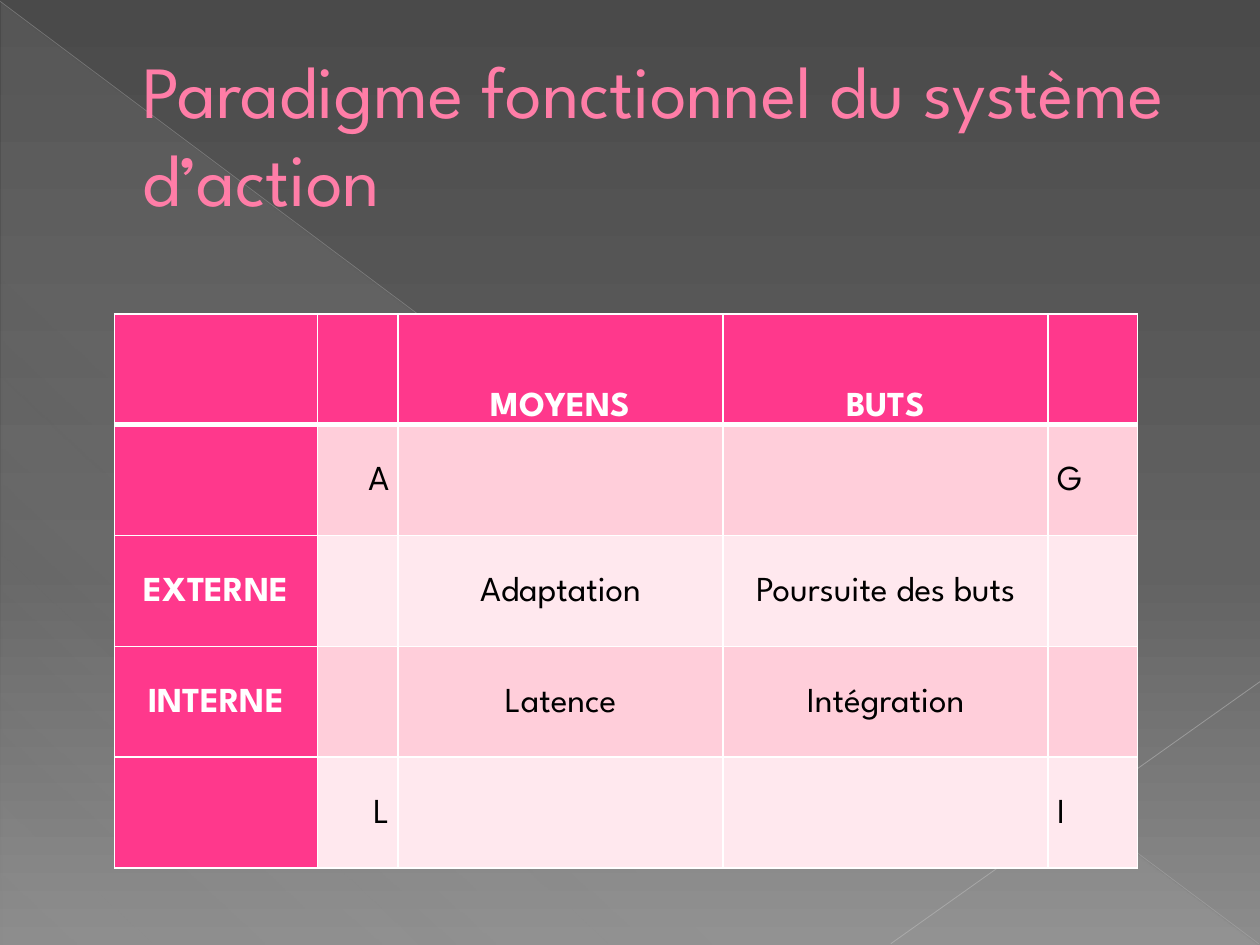
from lxml import etree
from pptx import Presentation
from pptx.dml.color import RGBColor
from pptx.enum.shapes import MSO_CONNECTOR, MSO_SHAPE
from pptx.enum.text import MSO_ANCHOR, PP_ALIGN
from pptx.oxml.ns import qn
from pptx.util import Inches, Pt

LEFT, CENTER, RIGHT = PP_ALIGN.LEFT, PP_ALIGN.CENTER, PP_ALIGN.RIGHT
MIDDLE, BOTTOM = MSO_ANCHOR.MIDDLE, MSO_ANCHOR.BOTTOM
STRAIGHT = MSO_CONNECTOR.STRAIGHT
RIGHT_TRIANGLE = MSO_SHAPE.RIGHT_TRIANGLE

ROWS = [
    ["", "", "MOYENS", "BUTS", ""],
    ["", "A", "", "", "G"],
    ["EXTERNE", "", "Adaptation", "Poursuite des buts", ""],
    ["INTERNE", "", "Latence", "Intégration", ""],
    ["", "L", "", "", "I"],
]
COLUMN_WIDTHS = [1.61, 0.64, 2.58, 2.58, 0.71]
COLUMN_ALIGNMENTS = [CENTER, RIGHT, CENTER, CENTER, LEFT]
ROW_HEIGHT = 0.88


def color(hex_string):
    return RGBColor.from_string(hex_string)


def add_color(parent, hex_string, opacity=100):
    """Append a solid colour with its opacity in percent to an XML element."""
    element = etree.SubElement(parent, qn("a:srgbClr"), val=hex_string)
    if opacity < 100:
        etree.SubElement(element, qn("a:alpha"), val=str(opacity * 1000))


def replace_with_gradient(solid_fill, stops, angle):
    """Swap a solid fill for stops of (position, colour, opacity)."""
    gradient = etree.Element(qn("a:gradFill"), rotWithShape="1")
    stop_list = etree.SubElement(gradient, qn("a:gsLst"))
    for position, hex_string, opacity in stops:
        stop = etree.SubElement(stop_list, qn("a:gs"), pos=str(position * 1000))
        add_color(stop, hex_string, opacity)
    etree.SubElement(gradient, qn("a:lin"), ang=str(angle * 60000), scaled="0")
    solid_fill.getparent().replace(solid_fill, gradient)


def write(text_frame, text, size=20, hex_string="000000", bold=False,
          align=LEFT, line_spacing=None, indent=0):
    paragraph = text_frame.paragraphs[0]
    paragraph.alignment = align
    if line_spacing:
        paragraph.line_spacing = line_spacing
    if indent:
        properties = paragraph._p.get_or_add_pPr()
        properties.set("marL", str(Inches(indent)))
        properties.set("indent", "0")
    run = paragraph.add_run()
    run.text = text
    run.font.name = SlideBuilder.FONT
    run.font.size = Pt(size)
    run.font.bold = bold
    run.font.color.rgb = color(hex_string)


class SlideBuilder:
    FONT = "League Spartan"
    TITLE = "FF7DA7"
    ACCENT = "FF388C"
    BANDS = ["FFE8EE", "FFCEDA"]
    WHITE = "FFFFFF"

    def __init__(self, presentation):
        self.slide = presentation.slides.add_slide(presentation.slide_layouts[6])

    def background(self, stops, angle):
        self.slide.background.fill.solid()
        solid_fill = self.slide._element.find(".//" + qn("a:solidFill"))
        replace_with_gradient(solid_fill, stops, angle)

    def triangle(self, left, top, width, height, stops, angle):
        shape = self.slide.shapes.add_shape(
            RIGHT_TRIANGLE, Inches(left), Inches(top), Inches(width), Inches(height))
        shape.shadow.inherit = False
        shape.line.fill.background()
        shape.fill.solid()
        solid_fill = shape._element.spPr.find(qn("a:solidFill"))
        replace_with_gradient(solid_fill, stops, angle)

    def line(self, start, end, hex_string, width, opacity):
        connector = self.slide.shapes.add_connector(
            STRAIGHT, *(Inches(value) for value in start + end))
        connector.line.width = Pt(width)
        connector.line.color.rgb = color(hex_string)
        properties = connector._element.spPr
        line_color = properties.find(".//" + qn("a:srgbClr"))
        etree.SubElement(line_color, qn("a:alpha"), val=str(opacity * 1000))
        etree.SubElement(properties, qn("a:effectLst"))

    def title(self, text, left, top, width, height):
        box = self.slide.shapes.add_textbox(
            Inches(left), Inches(top), Inches(width), Inches(height))
        box.text_frame.word_wrap = True
        box.text_frame.vertical_anchor = MIDDLE
        write(box.text_frame, text, size=42, hex_string=self.TITLE, indent=0.53)

    def table(self, rows, left, top):
        table = self.slide.shapes.add_table(
            len(rows), len(COLUMN_WIDTHS), Inches(left), Inches(top),
            Inches(sum(COLUMN_WIDTHS)), Inches(ROW_HEIGHT * len(rows))).table
        table.horz_banding = False
        for column, width in zip(table.columns, COLUMN_WIDTHS):
            column.width = Inches(width)
        for row_index, texts in enumerate(rows):
            table.rows[row_index].height = Inches(ROW_HEIGHT)
            for column_index, text in enumerate(texts):
                self.cell(table.cell(row_index, column_index), text,
                          row_index, column_index)

    def cell(self, cell, text, row, column):
        is_header = row == 0 or column == 0
        cell.margin_left = cell.margin_right = Inches(0.07)
        cell.margin_top = cell.margin_bottom = 0
        cell.vertical_anchor = BOTTOM if row == 0 else MIDDLE
        cell.fill.solid()
        cell.fill.fore_color.rgb = color(self.ACCENT if is_header else self.BANDS[row % 2])
        self.borders(cell, top=3 if row == 1 else 1, bottom=3 if row == 0 else 1)
        if text:
            write(cell.text_frame, text, bold=is_header, line_spacing=1.15,
                  hex_string=self.WHITE if is_header else "000000",
                  align=COLUMN_ALIGNMENTS[column])

    def borders(self, cell, top, bottom):
        properties = cell._tc.get_or_add_tcPr()
        widths = {"a:lnL": 1, "a:lnR": 1, "a:lnT": top, "a:lnB": bottom}
        for index, (tag, width) in enumerate(widths.items()):
            border = etree.Element(qn(tag), w=str(Pt(width)))
            add_color(etree.SubElement(border, qn("a:solidFill")), self.WHITE)
            properties.insert(index, border)


def main():
    presentation = Presentation()
    presentation.slide_width = Inches(10)
    presentation.slide_height = Inches(7.5)

    builder = SlideBuilder(presentation)
    builder.background(
        [(0, "4A4A4A", 100), (60, "626262", 100), (100, "8C8C8C", 100)], angle=90)
    builder.triangle(
        0.01, 0.02, 9.98, 7.48,
        [(0, "D2D2D2", 10), (70, "D2D2D2", 8), (100, "D2D2D2", 1)], angle=133)
    builder.line((0, 0.01), (9.99, 7.49), "BFBFBF", width=0.39, opacity=35)
    builder.line((10, 5.41), (7.07, 7.49), "C6C6C6", width=0.47, opacity=45)
    builder.title("Paradigme fonctionnel du système d’action", 0.5, 0.29, 9, 1.53)
    builder.table(ROWS, 0.91, 2.49)
    presentation.save("out.pptx")


if __name__ == "__main__":
    main()
